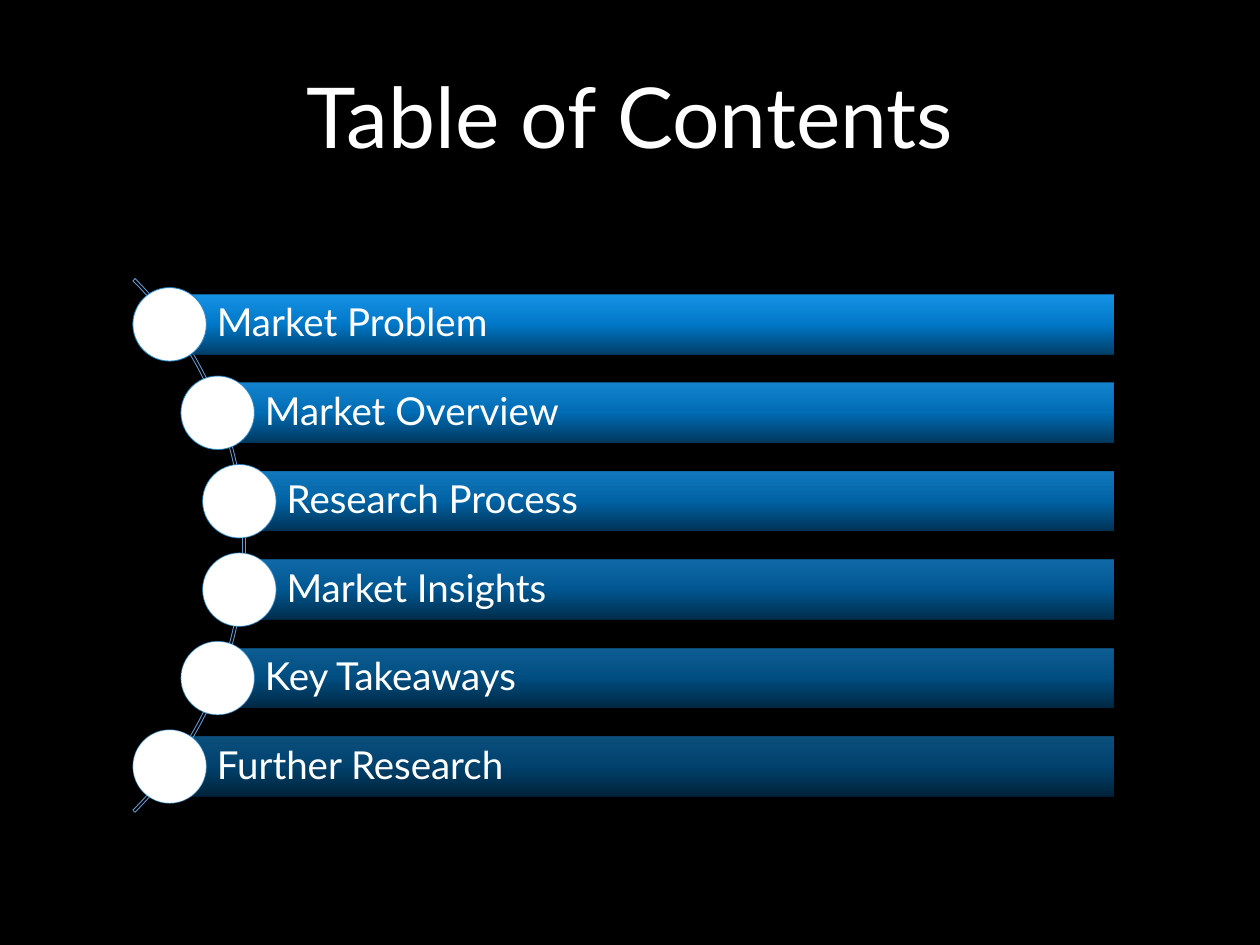
from math import sqrt

from lxml import etree
from pptx import Presentation
from pptx.dml.color import RGBColor
from pptx.enum import shapes, text
from pptx.oxml import ns
from pptx.util import Pt

BLACK = RGBColor(0x00, 0x00, 0x00)
WHITE = RGBColor(0xFF, 0xFF, 0xFF)
ARC_BLUE = RGBColor(0x60, 0x98, 0xD3)
RING_BLUE = RGBColor(0x1D, 0x86, 0xCD)
BAR_STOPS = (
    (0, RGBColor(0x01, 0x45, 0x73)),
    (50, RGBColor(0x02, 0x85, 0xDD)),
    (100, RGBColor(0x1A, 0xA3, 0xFF)),
)
TOPICS = ("Market Problem", "Market Overview", "Research Process",
          "Market Insights", "Key Takeaways", "Further Research")


def set_attributes(target, values):
    for name, value in values.items():
        setattr(target, name, value)


def write_text(shape, words, size, align, margins):
    """Margins are left, top, right and bottom in points."""
    left, top, right, bottom = map(Pt, margins)
    frame = shape.text_frame
    set_attributes(frame, dict(
        word_wrap=True, vertical_anchor=text.MSO_ANCHOR.MIDDLE,
        margin_left=left, margin_top=top,
        margin_right=right, margin_bottom=bottom))
    para = frame.paragraphs[0]
    para.alignment = align
    span = para.add_run()
    span.text = words
    set_attributes(span.font, dict(name="Lato", size=Pt(size)))
    span.font.color.rgb = WHITE
    return para


def add_plain_shape(page, kind, left, top, width, height):
    shape = page.shapes.add_shape(kind, Pt(left), Pt(top), Pt(width), Pt(height))
    shape.shadow.inherit = False
    return shape


def outline(shape, color):
    shape.line.color.rgb = color
    shape.line.width = Pt(0.5)


def add_alpha(color_element, percent):
    etree.SubElement(color_element, ns.qn("a:alpha"), val=str(percent * 1000))


def fill_gradient(shape, opacity):
    """Fill from dark at the bottom to light at the top."""
    shape.fill.gradient()
    shape.fill.gradient_angle = 90
    stops = shape._element.spPr.find(".//" + ns.qn("a:gsLst"))
    for stop in list(stops):
        stops.remove(stop)
    for position, color in BAR_STOPS:
        stop = etree.SubElement(stops, ns.qn("a:gs"), pos=str(position * 1000))
        add_alpha(etree.SubElement(stop, ns.qn("a:srgbClr"), val=str(color)), opacity)


def add_title(page, left, top, width, height):
    box = page.shapes.add_textbox(Pt(left), Pt(top), Pt(width), Pt(height))
    write_text(box, "Table of Contents", 48, text.PP_ALIGN.CENTER,
               (7.2, 3.6, 7.2, 3.6))


def add_arc(page, center_x, center_y, radius):
    arc = add_plain_shape(page, shapes.MSO_SHAPE.BLOCK_ARC, center_x - radius,
                          center_y - radius, 2 * radius, 2 * radius)
    for index, value in enumerate((189, 27, 0.004)):
        arc.adjustments[index] = value
    arc.fill.background()
    outline(arc, ARC_BLUE)


def add_topic(page, center_x, center_y, right, words, opacity):
    """A bar from center_x to right, with a disc on its left end."""
    height, disc_size = 34, 42
    bar = add_plain_shape(page, shapes.MSO_SHAPE.RECTANGLE, center_x,
                          center_y - height / 2, right - center_x, height)
    fill_gradient(bar, opacity)
    bar.line.fill.background()
    para = write_text(bar, words, 22, text.PP_ALIGN.LEFT, (27, 4.4, 4.4, 4.4))
    para.line_spacing = 0.9

    disc = add_plain_shape(page, shapes.MSO_SHAPE.OVAL, center_x - disc_size / 2,
                           center_y - disc_size / 2, disc_size, disc_size)
    disc.fill.solid()
    disc.fill.fore_color.rgb = WHITE
    outline(disc, RING_BLUE)
    line_color = disc._element.spPr.find(ns.qn("a:ln")).find(".//" + ns.qn("a:srgbClr"))
    add_alpha(line_color, opacity)


def add_contents(page, left, top, width, height):
    """Topics spaced evenly down an arc that bulges to the right."""
    arc_x, arc_y, radius = left - 151, top + height / 2, 215.6
    add_arc(page, arc_x, arc_y, radius)
    pitch = height / len(TOPICS)
    for index, words in enumerate(TOPICS):
        offset = (index - (len(TOPICS) - 1) / 2) * pitch
        center_x = arc_x + sqrt((radius - 2) ** 2 - offset ** 2)
        add_topic(page, center_x, arc_y + offset, left + width, words,
                  90 - 8 * index)


def main():
    deck = Presentation()
    set_attributes(deck, dict(slide_width=Pt(720), slide_height=Pt(540)))
    page = deck.slides.add_slide(deck.slide_layouts[6])
    page.background.fill.solid()
    page.background.fill.fore_color.rgb = BLACK
    add_title(page, 54, 9.4, 612, 112.3)
    add_contents(page, 75.7, 160.1, 560.6, 303.2)
    deck.save("out.pptx")


if __name__ == "__main__":
    main()
